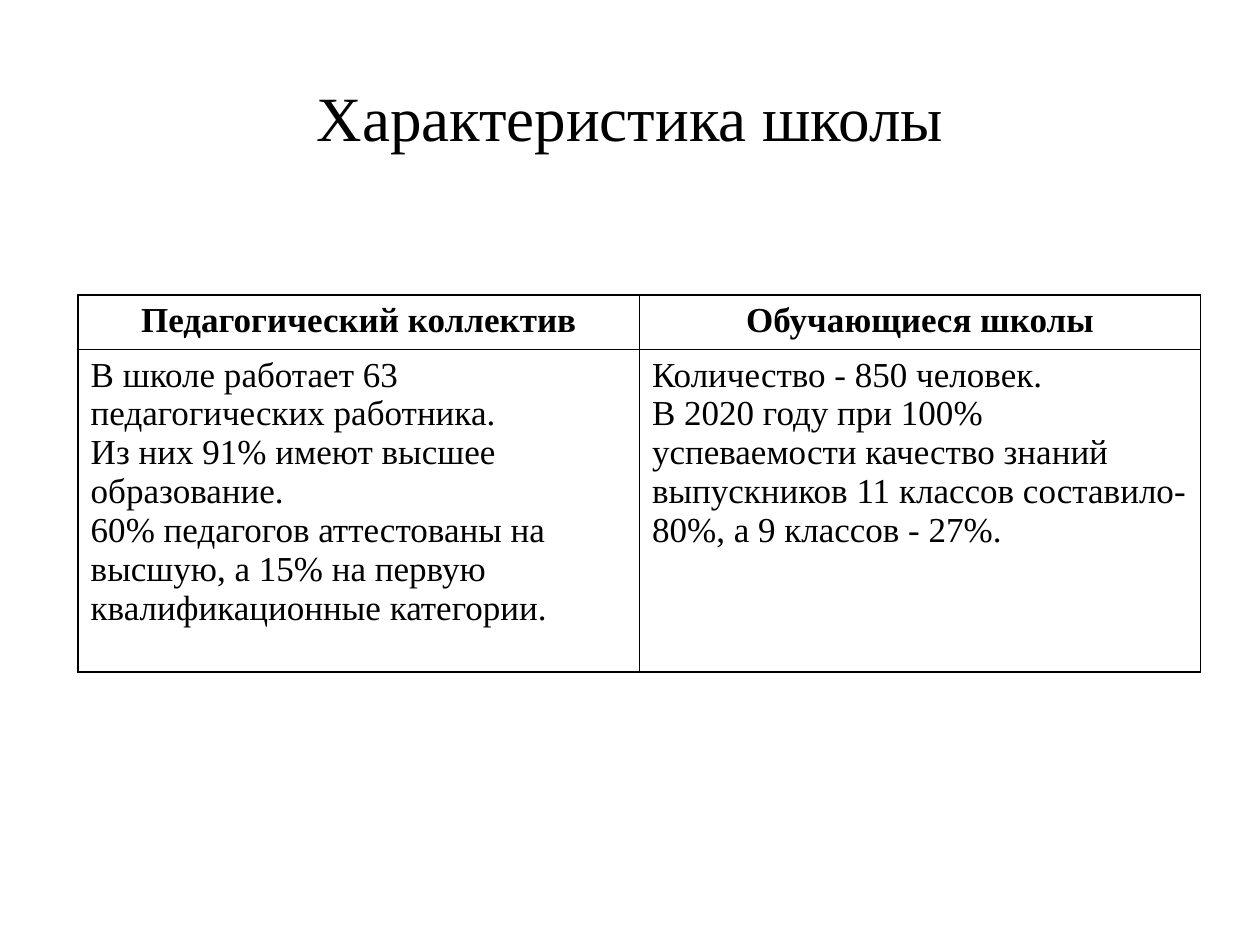
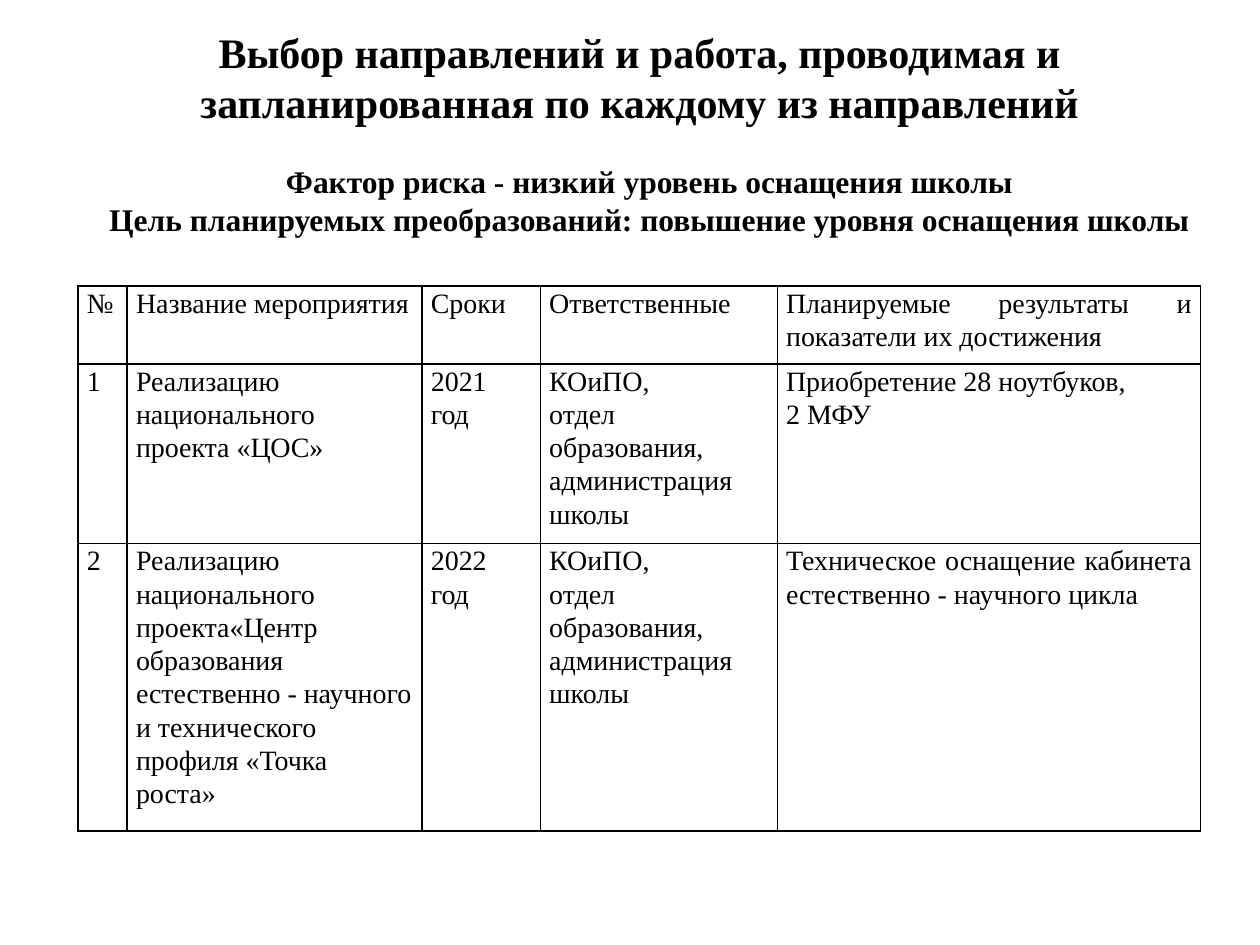
from dataclasses import dataclass

from lxml import etree
from pptx import Presentation
from pptx.dml.color import RGBColor
from pptx.enum.text import MSO_ANCHOR, PP_ALIGN
from pptx.oxml.ns import qn
from pptx.util import Inches, Pt

LEFT, CENTER, JUSTIFY = PP_ALIGN.LEFT, PP_ALIGN.CENTER, PP_ALIGN.JUSTIFY
TOP, MIDDLE = MSO_ANCHOR.TOP, MSO_ANCHOR.MIDDLE
BLANK_LAYOUT = 6


@dataclass(frozen=True)
class Theme:
    font: str = "Times New Roman"
    ink: str = "000000"
    border: float = 1
    title: int = 36
    plan_title: int = 24
    profile: int = 20
    goal: int = 18
    plan: int = 16


THEME = Theme()


def write_lines(frame, lines, size, align, bold=False, spacing=None):
    """Write one paragraph per line in the shared typeface."""
    for index, line in enumerate(lines):
        paragraph = frame.paragraphs[0] if index == 0 else frame.add_paragraph()
        paragraph.text = line
        paragraph.alignment = align
        paragraph.line_spacing = spacing
        paragraph.font.name = THEME.font
        paragraph.font.size = Pt(size)
        paragraph.font.bold = bold
        paragraph.font.color.rgb = RGBColor.from_string(THEME.ink)


def add_heading(slide, box, lines, size, bold=False, anchor=TOP, wrap=True):
    frame = slide.shapes.add_textbox(*map(Inches, box)).text_frame
    frame.word_wrap = wrap
    frame.vertical_anchor = anchor
    write_lines(frame, lines, size, CENTER, bold)


def outline_cell(cell):
    """Clear the cell fill and rule all four sides."""
    cell.fill.background()
    properties = cell._tc.get_or_add_tcPr()
    for index, side in enumerate(("a:lnL", "a:lnR", "a:lnT", "a:lnB")):
        line = etree.Element(qn(side), w=str(Pt(THEME.border)))
        fill = etree.SubElement(line, qn("a:solidFill"))
        etree.SubElement(fill, qn("a:srgbClr"), val=THEME.ink)
        properties.insert(index, line)


def add_grid(slide, left, top, widths, heights):
    """Add an unfilled, ruled table and return it."""
    table = slide.shapes.add_table(
        len(heights), len(widths), Inches(left), Inches(top),
        Inches(sum(widths)), Inches(sum(heights))).table
    table.first_row = table.horz_banding = False
    for column, width in zip(table.columns, widths):
        column.width = Inches(width)
    for row, height in zip(table.rows, heights):
        row.height = Inches(height)
    for cell in table.iter_cells():
        outline_cell(cell)
    return table


def build_school_profile(slide):
    add_heading(slide, (0.5, 0.3, 9, 1.25), ["Характеристика школы"],
                THEME.title, anchor=MIDDLE)

    # Staff and students side by side
    profile = {
        "Педагогический коллектив": [
            "В школе работает 63 педагогических работника.",
            "Из них 91% имеют высшее образование.",
            "60% педагогов аттестованы на высшую, а 15% на первую "
            "квалификационные категории.",
        ],
        "Обучающиеся школы": [
            "Количество - 850 человек.",
            "В 2020 году при 100% успеваемости качество знаний выпускников "
            "11 классов составило- 80%, а 9 классов - 27%.",
        ],
    }
    table = add_grid(slide, 0.62, 2.34, [4.455] * 2, [0.41, 2.56])
    for column, (group, facts) in enumerate(profile.items()):
        write_lines(table.cell(0, column).text_frame, [group],
                    THEME.profile, CENTER, bold=True)
        write_lines(table.cell(1, column).text_frame, facts,
                    THEME.profile, LEFT)


def build_action_plan(slide):
    add_heading(slide, (0.7, 0.16, 8.75, 0.91),
                ["Выбор направлений и работа, проводимая и запланированная "
                 "по каждому из направлений"],
                THEME.plan_title, bold=True)

    # Risk factor and goal
    add_heading(slide, (0.72, 1.24, 8.87, 0.71),
                ["Фактор риска - низкий уровень оснащения школы",
                 "Цель планируемых преобразований: повышение уровня "
                 "оснащения школы"],
                THEME.goal, bold=True, wrap=False)

    # Planned activities
    responsible = ["КОиПО,", "отдел образования,", "администрация школы"]
    plan = [
        [["№"], ["Название мероприятия"], ["Сроки"], ["Ответственные"],
         ["Планируемые результаты и показатели их достижения"]],
        [["1"], ["Реализацию национального проекта «ЦОС»"], ["2021 год"],
         responsible, ["Приобретение 28 ноутбуков,", "2 МФУ"]],
        [["2"], ["Реализацию национального проекта«Центр образования "
                 "естественно - научного и технического профиля "
                 "«Точка роста»"], ["2022 год"], responsible,
         ["Техническое оснащение кабинета естественно - научного цикла"]],
    ]
    left_aligned = {(1, 4), (2, 1)}
    table = add_grid(slide, 0.62, 2.27, [0.39, 2.34, 0.94, 1.88, 3.36],
                     [0.62, 1.41, 2.11])
    for row, activity in enumerate(plan):
        for column, lines in enumerate(activity):
            cell = table.cell(row, column)
            cell.margin_left = cell.margin_right = Inches(0.07)
            cell.margin_top = cell.margin_bottom = 0
            align = LEFT if (row, column) in left_aligned else JUSTIFY
            write_lines(cell.text_frame, lines, THEME.plan, align,
                        spacing=1.07)


def main():
    deck = Presentation()
    deck.slide_width, deck.slide_height = Inches(10), Inches(7.5)
    for build in (build_school_profile, build_action_plan):
        build(deck.slides.add_slide(deck.slide_layouts[BLANK_LAYOUT]))
    deck.save("out.pptx")


if __name__ == "__main__":
    main()
